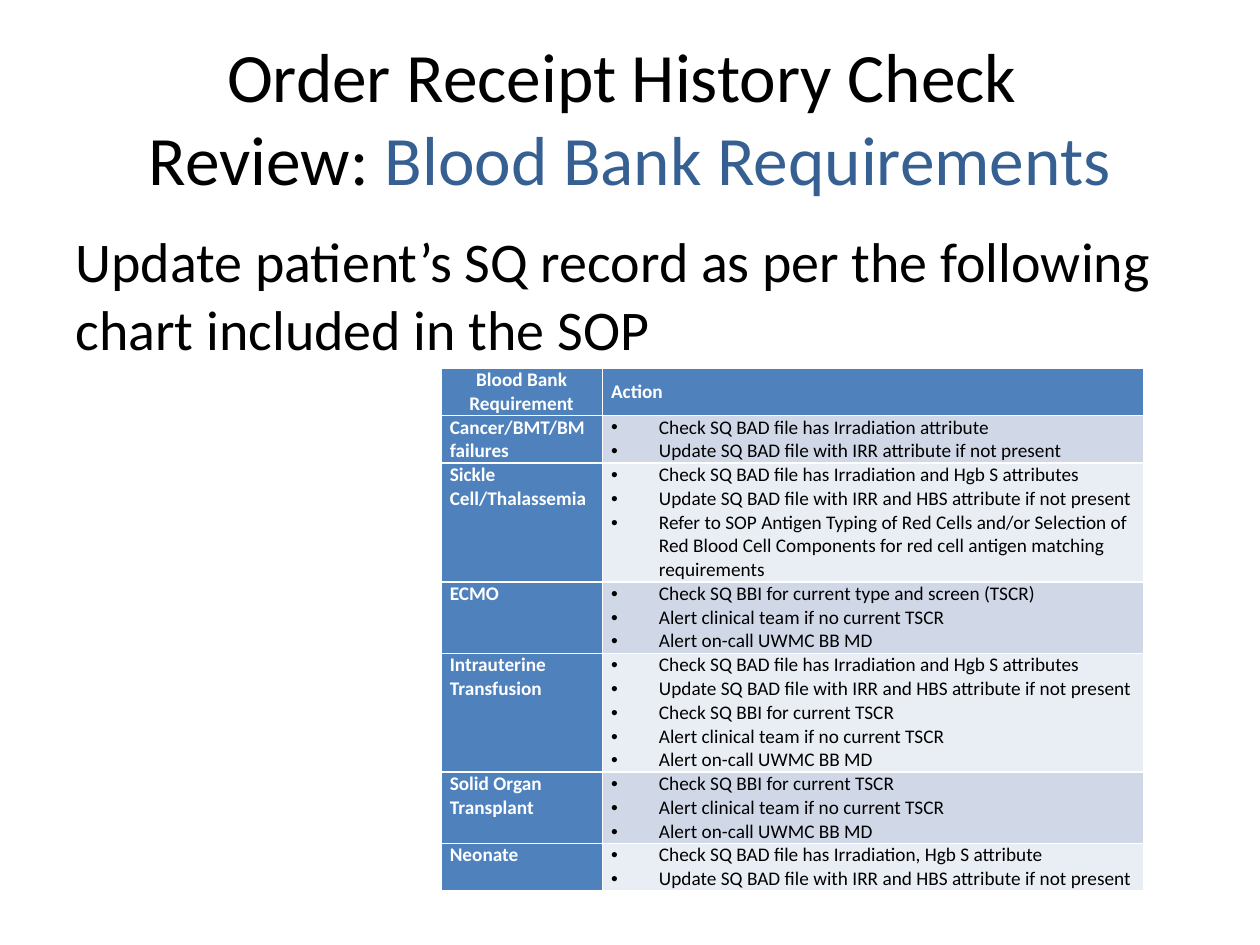
from lxml.etree import SubElement
from pptx import Presentation
from pptx.dml.color import RGBColor
from pptx.enum.text import MSO_ANCHOR as Anchor, MSO_AUTO_SIZE as AutoSize, PP_ALIGN as Align
from pptx.oxml.ns import qn
from pptx.util import Inches, Pt

FONT = "Calibri"
BLACK, WHITE = "000000", "FFFFFF"
BLUE, DARK_BLUE = "4F81BD", "376092"
BANDS = ["D0D8E8", "E9EDF4"]

CHECK_BOTH = "Check SQ BAD file has Irradiation and Hgb S attributes"
UPDATE_BOTH = "Update SQ BAD file with IRR and HBS attribute if not present"
CHECK_TSCR = "Check SQ BBI for current TSCR"
ALERTS = ["Alert clinical team if no current TSCR", "Alert on-call UWMC BB MD"]

HEADERS = ["Blood Bank Requirement", "Action"]
REQUIREMENTS = [
    ("Cancer/BMT/BM failures", [
        "Check SQ BAD file has Irradiation attribute",
        "Update SQ BAD file with IRR attribute if not present"]),
    ("Sickle Cell/Thalassemia", [
        CHECK_BOTH, UPDATE_BOTH,
        "Refer to SOP Antigen Typing of Red Cells and/or Selection of "
        "Red Blood Cell Components for red cell antigen matching requirements"]),
    ("ECMO", ["Check SQ BBI for current type and screen (TSCR)", *ALERTS]),
    ("Intrauterine Transfusion", [CHECK_BOTH, UPDATE_BOTH, CHECK_TSCR, *ALERTS]),
    ("Solid Organ Transplant", [CHECK_TSCR, *ALERTS]),
    ("Neonate", ["Check SQ BAD file has Irradiation, Hgb S attribute", UPDATE_BOTH]),
]
COLUMN_WIDTHS = [1.28, 4.3]
ROW_HEIGHTS = [0.34, 0.34, 0.84, 0.5, 0.84, 0.5, 0.34]


def color(value):
    return RGBColor.from_string(value)


class SlideBuilder:
    def __init__(self, slide):
        self.slide = slide

    def style(self, span, size, ink, bold=False):
        span.font.name = FONT
        span.font.size = Pt(size)
        span.font.bold = bold
        span.font.color.rgb = color(ink)

    def place(self, box, left, top, width, height):
        box.left, box.top = Inches(left), Inches(top)
        box.width, box.height = Inches(width), Inches(height)
        box.text_frame.auto_size = AutoSize.NONE

    def title(self, text, highlight):
        box = self.slide.shapes.title
        self.place(box, 0.5, 0.3, 9, 1.25)
        box.text_frame.vertical_anchor = Anchor.MIDDLE
        para = box.text_frame.paragraphs[0]
        para.text = text
        para.alignment = Align.CENTER
        for span in para.runs:
            self.style(span, 39.6, BLACK)
        span = para.add_run()
        span.text = highlight
        self.style(span, 39.6, DARK_BLUE)

    def body(self, text):
        box = self.slide.placeholders[1]
        self.place(box, 0.5, 1.75, 9, 4.95)
        box.text_frame.text = text
        para = box.text_frame.paragraphs[0]
        self.bullet(para, 0, None)
        self.style(para.runs[0], 32, BLACK)

    def bullet(self, para, indent, symbol):
        properties = para._p.get_or_add_pPr()
        properties.set("marL", str(Inches(indent)))
        properties.set("indent", str(Inches(-indent)))
        if symbol:
            SubElement(properties, qn("a:buFont"), typeface="Arial")
            SubElement(properties, qn("a:buChar"), char=symbol)
        else:
            SubElement(properties, qn("a:buNone"))

    def cell(self, cell, lines, fill, ink, bold=True, symbol=None):
        cell.fill.solid()
        cell.fill.fore_color.rgb = color(fill)
        cell.margin_left = cell.margin_right = Inches(0.07)
        cell.margin_top = cell.margin_bottom = 0
        cell.text_frame.text = "\n".join(lines)
        for para in cell.text_frame.paragraphs:
            if symbol:
                self.bullet(para, 0.38, symbol)
            self.style(para.runs[0], 11, ink, bold)

    def table(self, left, top):
        table = self.slide.shapes.add_table(
            len(ROW_HEIGHTS), len(COLUMN_WIDTHS), Inches(left), Inches(top),
            Inches(sum(COLUMN_WIDTHS)), Inches(sum(ROW_HEIGHTS))).table
        for column, width in zip(table.columns, COLUMN_WIDTHS):
            column.width = Inches(width)
        for row, height in zip(table.rows, ROW_HEIGHTS):
            row.height = Inches(height)
        for index, header in enumerate(HEADERS):
            self.cell(table.cell(0, index), [header], BLUE, WHITE)
            table.cell(0, index).vertical_anchor = Anchor.MIDDLE
        table.cell(0, 0).text_frame.paragraphs[0].alignment = Align.CENTER
        for index, (requirement, actions) in enumerate(REQUIREMENTS):
            self.cell(table.cell(index + 1, 0), [requirement], BLUE, WHITE)
            self.cell(table.cell(index + 1, 1), actions, BANDS[index % 2], BLACK, False, "•")


def main():
    deck = Presentation()
    deck.slide_width, deck.slide_height = Inches(10), Inches(7.5)
    page = SlideBuilder(deck.slides.add_slide(deck.slide_layouts[1]))
    page.title("Order Receipt History Check \vReview: ", "Blood Bank Requirements")
    page.body("Update patient’s SQ record as per the following chart included in the SOP")
    page.table(3.5, 2.92)
    deck.save("out.pptx")


if __name__ == "__main__":
    main()
